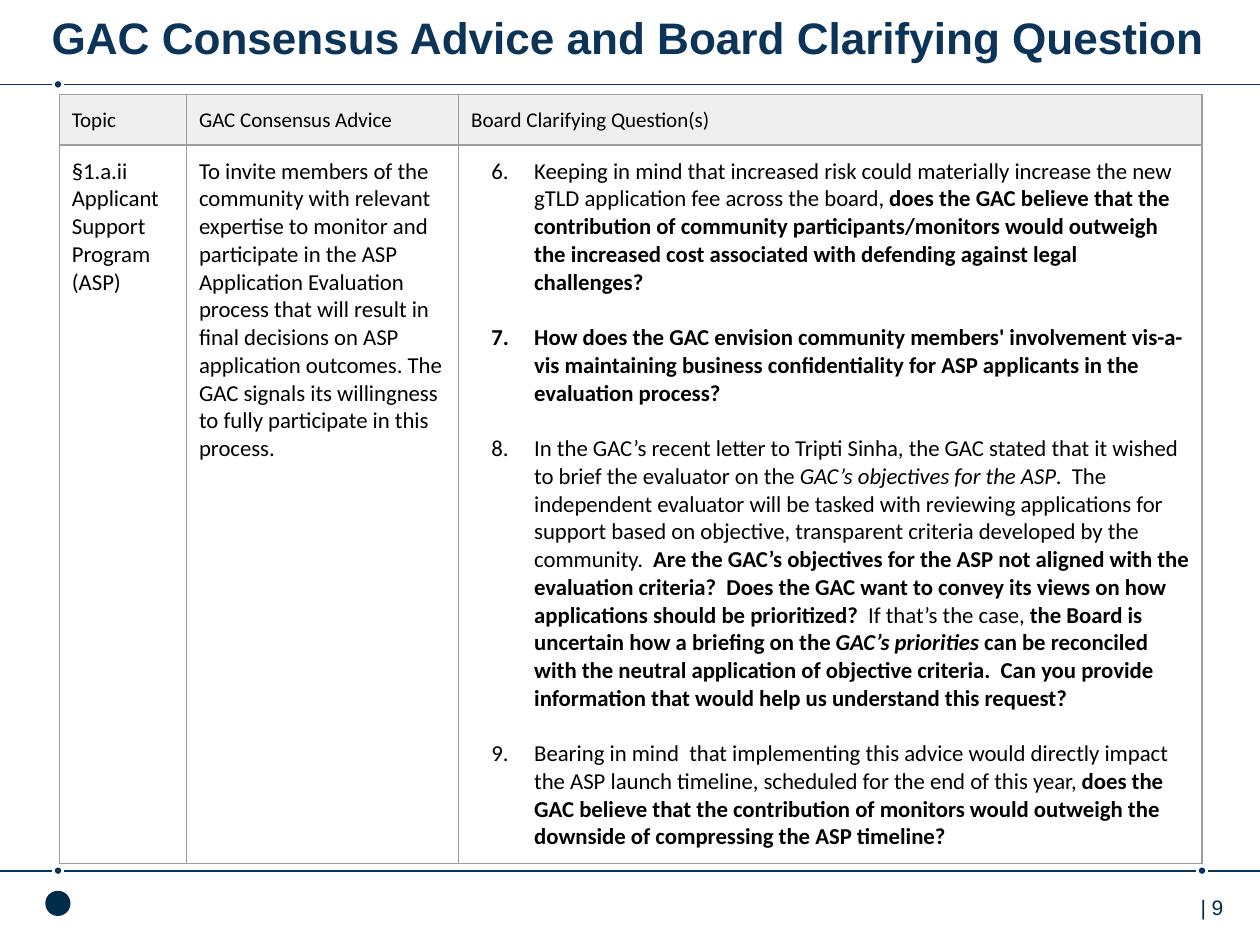
from lxml.etree import SubElement
from pptx import Presentation
from pptx.dml.color import RGBColor
from pptx.enum.shapes import MSO_CONNECTOR, MSO_SHAPE
from pptx.enum.text import MSO_ANCHOR, PP_ALIGN
from pptx.oxml.ns import qn
from pptx.util import Inches, Pt

THEME = {
    "navy": "0B3458", "ink": "002B49", "text": "000000",
    "header": "EFEFEF", "border": "9E9E9E",
    "title_font": "Arial", "body_font": "Calibri",
    "title_size": 25.2, "header_size": 12, "body_size": 13, "number_size": 12,
    "question_gap": 15.9, "rule_width": 1, "border_width": 0.75,
}

TITLE = "GAC Consensus Advice and Board Clarifying Question"
PAGE_NUMBER = "| 9"
HEADERS = ["Topic", "GAC Consensus Advice", "Board Clarifying Question(s)"]
TOPIC = ["§1.a.ii", "Applicant Support Program (ASP)"]
ADVICE = [
    "To invite members of the community with relevant expertise to monitor and "
    "participate in the ASP Application Evaluation process that will result in "
    "final decisions on ASP application outcomes. The GAC signals its willingness "
    "to fully participate in this process."
]
FIRST_QUESTION = 6
# Each question is a list of (text, style) pairs; style holds "b" and/or "i".
QUESTIONS = [
    [("Keeping in mind that increased risk could materially increase the new gTLD "
      "application fee across the board, ", ""),
     ("does the GAC believe that the contribution of community "
      "participants/monitors would outweigh the increased cost associated with "
      "defending against legal challenges?", "b")],
    [("How does the GAC envision community members' involvement vis-a-vis "
      "maintaining business confidentiality for ASP applicants in the evaluation "
      "process?", "b")],
    [("In the GAC’s recent letter to Tripti Sinha, the GAC stated that it wished to "
      "brief the evaluator on the ", ""),
     ("GAC’s objectives for the ASP", "i"),
     (".  The independent evaluator will be tasked with reviewing applications for "
      "support based on objective, transparent criteria developed by the "
      "community.  ", ""),
     ("Are the GAC’s objectives for the ASP not aligned with the evaluation "
      "criteria?  Does the GAC want to convey its views on how applications should "
      "be prioritized?", "b"),
     ("  If that’s the case, ", ""),
     ("the Board is uncertain how a briefing on the ", "b"),
     ("GAC’s priorities", "bi"),
     (" can be reconciled with the neutral application of objective criteria.  Can "
      "you provide information that would help us understand this request?", "b")],
    [("Bearing in mind  that implementing this advice would directly impact the ASP "
      "launch timeline, scheduled for the end of this year, ", ""),
     ("does the GAC believe that the contribution of monitors would outweigh the "
      "downside of compressing the ASP timeline?", "b")],
]

PAGE_WIDTH, PAGE_HEIGHT = 10, 7.5
DOT_SIZE, DOT_GAP = 0.05, 0.05
RULES = [(0.67, [0.46]), (6.91, [0.46, 9.54])]  # height, dot centres
TABLE_LEFT, TABLE_TOP = 0.47, 0.75
COLUMN_WIDTHS = [1.01, 2.16, 5.9]
ROW_HEIGHTS = [0.4, 5.7]


def style_span(span, size, color, font=THEME["body_font"], style=""):
    span.font.name = font
    span.font.size = Pt(size)
    span.font.color.rgb = RGBColor.from_string(color)
    span.font.bold = "b" in style
    span.font.italic = "i" in style


def add_ellipse(page, left, top, width, height, color):
    ellipse = page.shapes.add_shape(MSO_SHAPE.OVAL, Inches(left), Inches(top),
                                    Inches(width), Inches(height))
    ellipse.shadow.inherit = False
    ellipse.fill.solid()
    ellipse.fill.fore_color.rgb = RGBColor.from_string(color)
    ellipse.line.fill.background()


def add_rule(page, height, dots):
    """Draw a line across the page, interrupted by a dot at each centre."""
    edges = [0]
    for dot in dots:
        add_ellipse(page, dot - DOT_SIZE / 2, height - DOT_SIZE / 2,
                    DOT_SIZE, DOT_SIZE, THEME["navy"])
        edges += [dot - DOT_GAP, dot + DOT_GAP]
    edges.append(PAGE_WIDTH)
    for start, end in zip(edges[::2], edges[1::2]):
        line = page.shapes.add_connector(MSO_CONNECTOR.STRAIGHT, Inches(start),
                                         Inches(height), Inches(end), Inches(height))
        line.line.color.rgb = RGBColor.from_string(THEME["navy"])
        line.line.width = Pt(THEME["rule_width"])
        SubElement(line._element.spPr, qn("a:effectLst"))


def add_title(page):
    title = page.shapes.title
    title.left, title.top = Inches(0.41), Inches(0.05)
    title.width, title.height = Inches(9.59), Inches(0.49)
    frame = title.text_frame
    frame.text = TITLE
    frame.margin_left = frame.margin_right = 0
    frame.vertical_anchor = MSO_ANCHOR.MIDDLE
    para = frame.paragraphs[0]
    para.alignment = PP_ALIGN.LEFT
    style_span(para.runs[0], THEME["title_size"], THEME["navy"],
               THEME["title_font"], "b")


def add_page_number(page):
    box = page.shapes.add_textbox(Inches(9.43), Inches(7.05), Inches(0.5), Inches(0.4))
    box.text_frame.word_wrap = True
    box.text_frame.text = PAGE_NUMBER
    style_span(box.text_frame.paragraphs[0].runs[0], THEME["number_size"],
               THEME["ink"], THEME["title_font"])


def format_cell(cell, fill):
    cell.margin_left = cell.margin_right = Inches(0.1)
    cell.margin_top = cell.margin_bottom = Inches(0.1)
    properties = cell._tc.get_or_add_tcPr()
    for side in ("lnL", "lnR", "lnT", "lnB"):
        border = SubElement(properties, qn(f"a:{side}"), w=str(Pt(THEME["border_width"])))
        SubElement(SubElement(border, qn("a:solidFill")), qn("a:srgbClr"),
                   val=THEME["border"])
    if fill:
        cell.fill.solid()
        cell.fill.fore_color.rgb = RGBColor.from_string(fill)
    else:
        cell.fill.background()


def number_paragraph(para):
    properties = para._p.get_or_add_pPr()
    properties.set("marL", str(Inches(0.5)))
    properties.set("indent", str(Inches(-0.34)))
    SubElement(SubElement(properties, qn("a:buClr")), qn("a:srgbClr"), val=THEME["text"])
    SubElement(properties, qn("a:buFont"), typeface=THEME["body_font"])
    SubElement(properties, qn("a:buAutoNum"), type="arabicPeriod",
               startAt=str(FIRST_QUESTION))


def fill_cell(cell, paragraphs, size, numbered=False):
    frame = cell.text_frame
    for index, spans in enumerate(paragraphs):
        para = frame.paragraphs[0] if index == 0 else frame.add_paragraph()
        for text, style in spans:
            span = para.add_run()
            span.text = text
            style_span(span, size, THEME["text"], style=style)
        if numbered:
            if index < len(paragraphs) - 1:
                para.space_after = Pt(THEME["question_gap"])
            number_paragraph(para)


def add_advice_table(page):
    frame = page.shapes.add_table(
        len(ROW_HEIGHTS), len(COLUMN_WIDTHS), Inches(TABLE_LEFT), Inches(TABLE_TOP),
        Inches(sum(COLUMN_WIDTHS)), Inches(sum(ROW_HEIGHTS)))
    table = frame.table
    table.first_row = table.horz_banding = False
    for column, width in zip(table.columns, COLUMN_WIDTHS):
        column.width = Inches(width)
    for row, height in zip(table.rows, ROW_HEIGHTS):
        row.height = Inches(height)

    plain = [[[(line, "")] for line in lines] for lines in (TOPIC, ADVICE)]
    for index, body in enumerate(plain + [QUESTIONS]):
        header_cell, body_cell = table.cell(0, index), table.cell(1, index)
        format_cell(header_cell, THEME["header"])
        fill_cell(header_cell, [[(HEADERS[index], "")]], THEME["header_size"])
        format_cell(body_cell, None)
        fill_cell(body_cell, body, THEME["body_size"], numbered=body is QUESTIONS)


def main():
    deck = Presentation()
    deck.slide_width, deck.slide_height = Inches(PAGE_WIDTH), Inches(PAGE_HEIGHT)
    page = deck.slides.add_slide(deck.slide_layouts.get_by_name("Title Only"))
    for height, dots in RULES:
        add_rule(page, height, dots)
    add_page_number(page)
    add_ellipse(page, 0.36, 7.07, 0.2, 0.2, THEME["ink"])  # emblem
    add_title(page)
    add_advice_table(page)
    deck.save("out.pptx")


if __name__ == "__main__":
    main()
